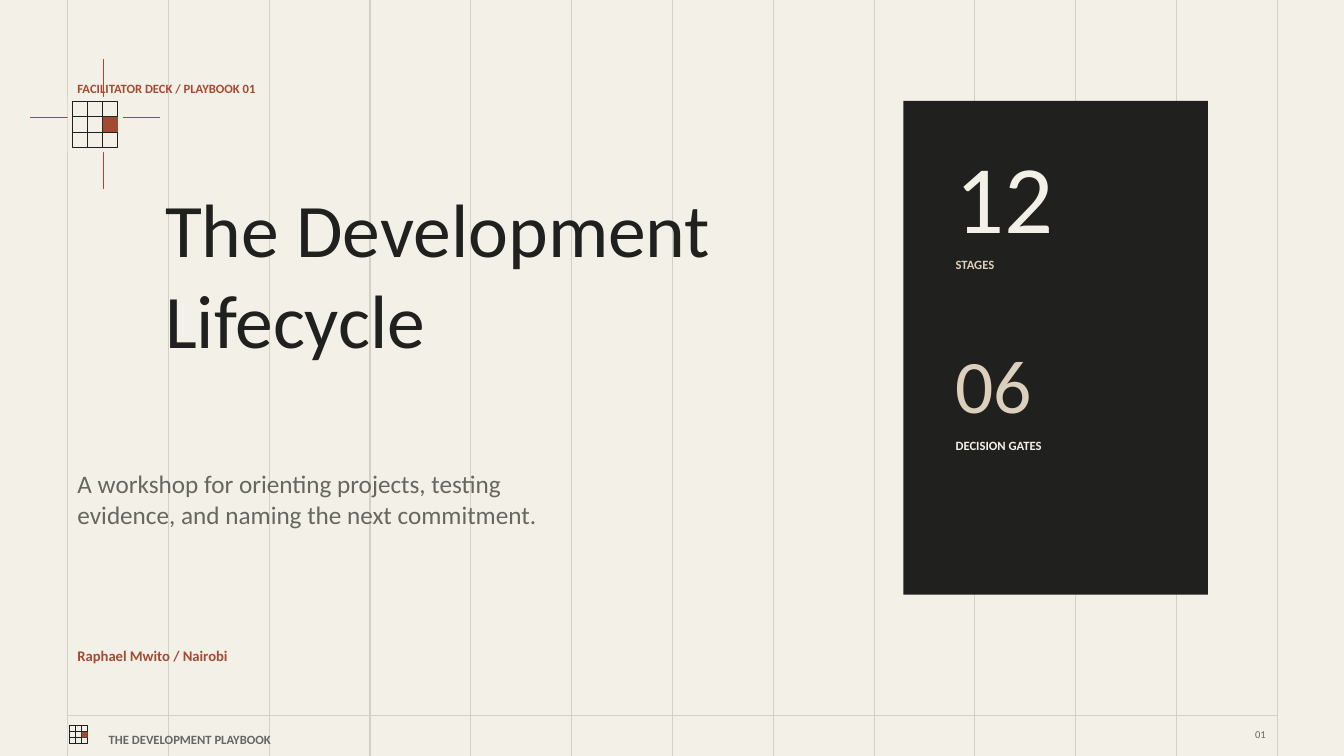
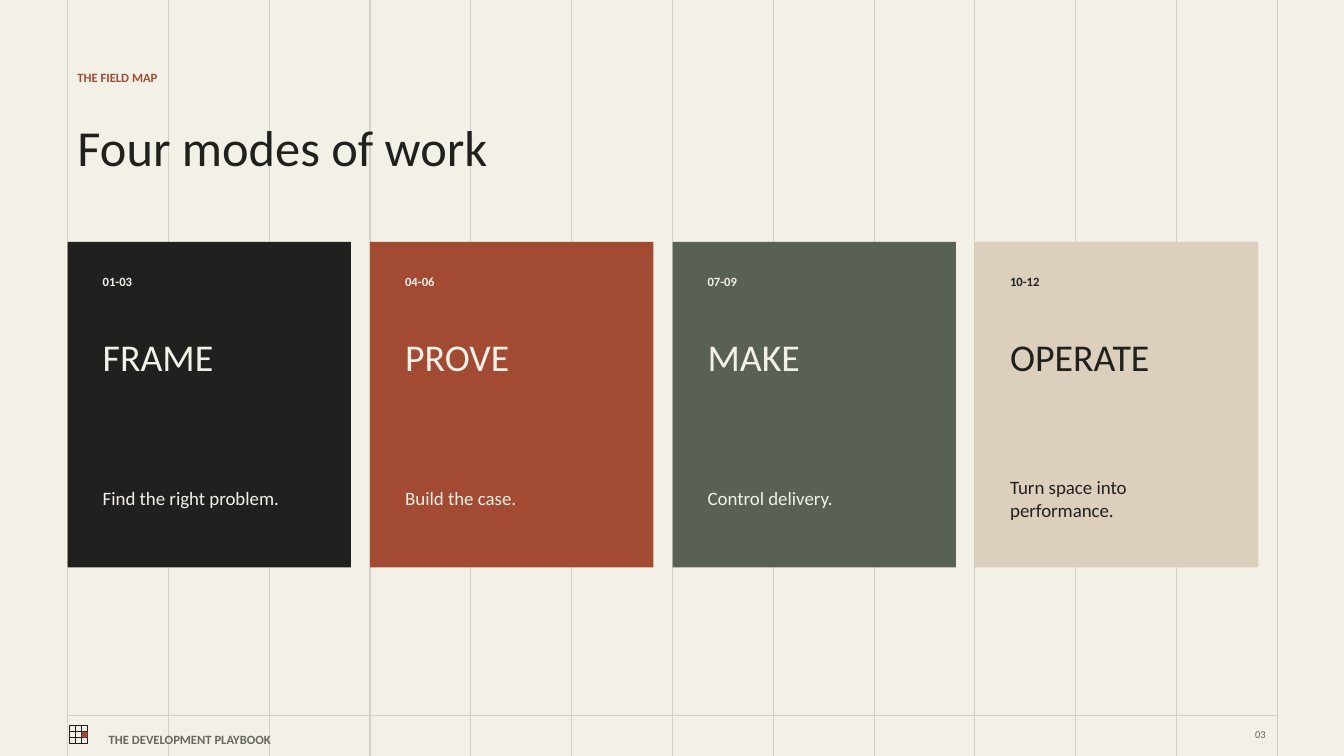
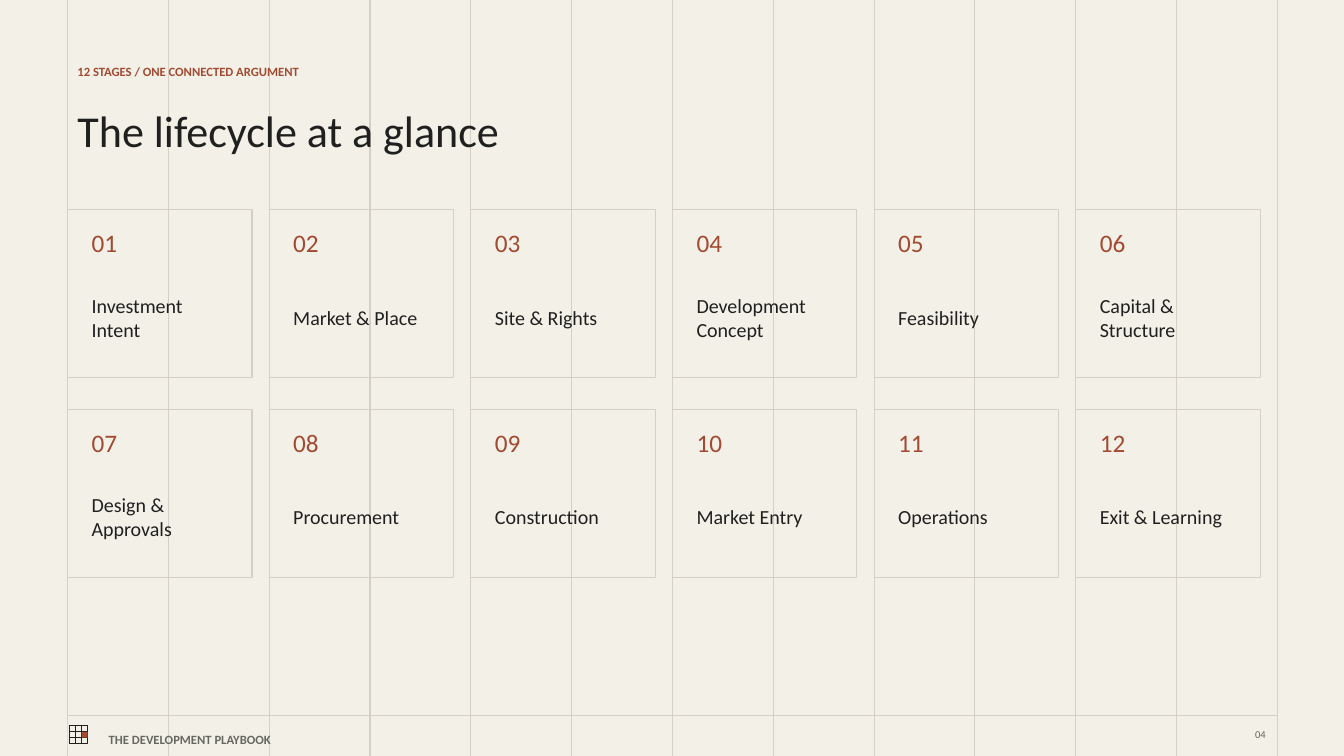
import pptx
import pptx.util
import pptx.dml.color
import pptx.enum.shapes
import pptx.enum.text
import pptx.oxml.ns
import lxml.etree

Inches = pptx.util.Inches
Pt = pptx.util.Pt

COLORS = {
    "paper": "F3F0E8",
    "rule": "D4D0C5",
    "ink": "20211F",
    "rust": "A34A32",
    "gray": "66675F",
    "moss": "596154",
    "sand": "DCCFBB",
}
FONT = "Calibri"
MARGIN = 0.67
COLUMNS = 12  # one inch each
HAIRLINE = 0.75

MODES = [
    ("01-03", "FRAME", "Find the right problem.", "ink", "paper"),
    ("04-06", "PROVE", "Build the case.", "rust", "paper"),
    ("07-09", "MAKE", "Control delivery.", "moss", "paper"),
    ("10-12", "OPERATE", "Turn space into performance.", "sand", "ink"),
]
STAGES = [
    "Investment Intent", "Market & Place", "Site & Rights",
    "Development Concept", "Feasibility", "Capital & Structure",
    "Design & Approvals", "Procurement", "Construction",
    "Market Entry", "Operations", "Exit & Learning",
]


def rgb(name):
    return pptx.dml.color.RGBColor.from_string(COLORS[name])


# Basic elements
def add_rect(s, x, y, w, h, fill=None, line=None):
    sp = s.shapes.add_shape(pptx.enum.shapes.MSO_SHAPE.RECTANGLE,
                            Inches(x), Inches(y), Inches(w), Inches(h))
    sp.shadow.inherit = False
    if fill:
        sp.fill.solid()
        sp.fill.fore_color.rgb = rgb(fill)
    else:
        sp.fill.background()
    if line:
        sp.line.color.rgb = rgb(line)
        sp.line.width = Pt(HAIRLINE)
    else:
        sp.line.fill.background()


def add_line(s, x1, y1, x2, y2, color):
    sp = s.shapes.add_connector(pptx.enum.shapes.MSO_CONNECTOR.STRAIGHT,
                                Inches(x1), Inches(y1), Inches(x2), Inches(y2))
    sp.line.color.rgb = rgb(color)
    sp.line.width = Pt(HAIRLINE)
    props = sp._element.find(pptx.oxml.ns.qn("p:spPr"))
    lxml.etree.SubElement(props, pptx.oxml.ns.qn("a:effectLst"))


def add_text(s, x, y, w, h, text, size, color, bold=False):
    """Each line of the text becomes a paragraph."""
    sp = s.shapes.add_textbox(Inches(x), Inches(y), Inches(w), Inches(h))
    tf = sp.text_frame
    tf.word_wrap = True
    tf.vertical_anchor = pptx.enum.text.MSO_ANCHOR.MIDDLE
    tf.text = text
    for p in tf.paragraphs:
        p.font.name = FONT
        p.font.size = Pt(size)
        p.font.bold = bold
        p.font.color.rgb = rgb(color)


# Shared parts
def add_grid_mark(s, x, y, cell, pad):
    """A three by three grid on a paper tile, with one cell filled."""
    side = 3 * cell
    tile = side + 2 * pad
    add_rect(s, x, y, tile, tile, fill="paper")
    x, y = x + pad, y + pad
    add_rect(s, x, y, side, side, line="ink")
    for i in (1, 2):
        add_line(s, x + i * cell, y, x + i * cell, y + side, "ink")
        add_line(s, x, y + i * cell, x + side, y + i * cell, "ink")
    add_rect(s, x + 2 * cell, y + cell, cell, cell, fill="rust")


def add_eyebrow(s, y, text):
    add_text(s, MARGIN, y, 3.54, 0.29, text, 9, "rust", bold=True)


def new_slide(prs, number):
    s = prs.slides.add_slide(prs.slide_layouts[6])
    # Column guides
    for i in range(COLUMNS + 1):
        add_line(s, MARGIN + i, 0, MARGIN + i, 7.5, "rule")
    # Footer
    add_line(s, MARGIN, 7.1, MARGIN + COLUMNS, 7.1, "rule")
    add_grid_mark(s, MARGIN, 7.18, cell=0.06, pad=0.02)
    add_text(s, 0.98, 7.19, 2.71, 0.29, "THE DEVELOPMENT PLAYBOOK", 9, "gray", bold=True)
    add_text(s, 12.35, 7.19, 0.31, 0.19, f"{number:02d}", 7.5, "gray")
    return s


# Slides
def build_cover(prs):
    s = new_slide(prs, 1)
    add_eyebrow(s, 0.73, "FACILITATOR DECK / PLAYBOOK 01")
    # Crosshair behind the grid mark
    add_line(s, 1.03, 0.59, 1.03, 1.88, "rust")
    add_line(s, 0.3, 1.17, 1.59, 1.17, "rust")
    add_grid_mark(s, MARGIN, 0.96, cell=0.15, pad=0.05)
    # Title and subtitle
    add_text(s, 1.54, 1.35, 6.77, 2.71, "The Development\nLifecycle", 54, "ink")
    add_text(s, MARGIN, 4.48, 5.21, 0.94,
             "A workshop for orienting projects, testing evidence, "
             "and naming the next commitment.", 18, "gray")
    # Key figures panel
    add_rect(s, 8.96, 1, 3.02, 4.9, fill="ink")
    add_text(s, 9.38, 1.41, 2.08, 1.04, "12", 69, "paper")
    add_text(s, 9.38, 2.48, 1.88, 0.29, "STAGES", 9, "sand", bold=True)
    add_text(s, 9.38, 3.33, 2.08, 0.94, "06", 54, "sand")
    add_text(s, 9.38, 4.27, 1.98, 0.29, "DECISION GATES", 9, "paper", bold=True)
    # Presenter
    add_text(s, MARGIN, 6.35, 3.33, 0.31, "Raphael Mwito / Nairobi", 10.5, "rust", bold=True)


def build_modes(prs):
    s = new_slide(prs, 3)
    add_eyebrow(s, 0.62, "THE FIELD MAP")
    add_text(s, MARGIN, 1.09, 6.25, 0.73, "Four modes of work", 36, "ink")
    # One card per mode, three columns apart
    for i, (stages, name, aim, fill, color) in enumerate(MODES):
        x = MARGIN + 3 * i
        add_rect(s, x, 2.4, 2.81, 3.23, fill=fill)
        add_text(s, x + 0.25, 2.65, 1.04, 0.29, stages, 9, color, bold=True)
        add_text(s, x + 0.25, 3.23, 2.29, 0.62, name, 27, color)
        add_text(s, x + 0.25, 4.58, 2.19, 0.73, aim, 13.5, color)


def build_stages(prs):
    s = new_slide(prs, 4)
    add_eyebrow(s, 0.56, "12 STAGES / ONE CONNECTED ARGUMENT")
    add_text(s, MARGIN, 0.98, 7.5, 0.62, "The lifecycle at a glance", 31.5, "ink")
    # Two rows of six cells, two columns apart
    for i, name in enumerate(STAGES):
        row, col = divmod(i, 6)
        x, y = MARGIN + 2 * col, 2.08 + 1.98 * row
        add_rect(s, x, y, 1.83, 1.67, line="rule")
        add_text(s, x + 0.14, y + 0.13, 0.52, 0.4, f"{i + 1:02d}", 18, "rust")
        add_text(s, x + 0.14, y + 0.71, 1.51, 0.71, name, 14.25, "ink")


def main():
    prs = pptx.Presentation()
    prs.slide_width = Inches(13.33)
    prs.slide_height = Inches(7.5)
    background = prs.slide_master.background.fill
    background.solid()
    background.fore_color.rgb = rgb("paper")
    build_cover(prs)
    build_modes(prs)
    build_stages(prs)
    prs.save("out.pptx")


if __name__ == "__main__":
    main()
